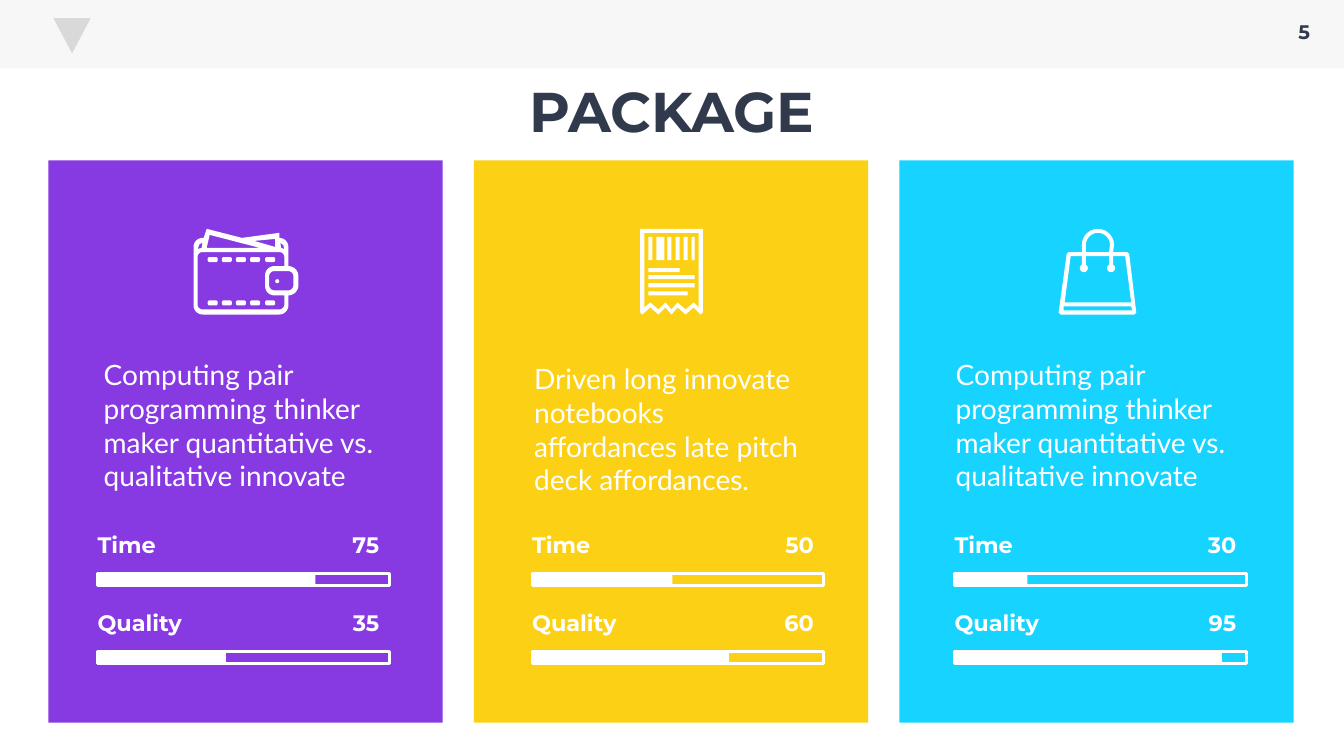
"""Build the PACKAGE slide: three coloured panels with an icon, a text and two meters."""
from dataclasses import dataclass
from math import cos, radians, sin

from pptx import Presentation
from pptx.dml.color import RGBColor
from pptx.enum.shapes import MSO_SHAPE as Preset
from pptx.enum.text import MSO_ANCHOR as Anchor, MSO_AUTO_SIZE as AutoSize, PP_ALIGN as Align
from pptx.shapes.autoshape import Shape
from pptx.slide import Slide
from pptx.util import Inches, Pt

Contour = list[tuple[float, float]]


@dataclass(frozen=True)
class Theme:
    heading_font: str = "Montserrat"
    body_font: str = "Lato"
    dark: str = "31394C"
    white: str = "FFFFFF"
    header: str = "F7F7F7"
    emblem: str = "D9D9D9"
    purple: str = "873AE2"
    yellow: str = "FCD015"
    cyan: str = "17D3FF"
    title_size: int = 40
    body_size: int = 20
    label_size: int = 16
    number_size: int = 14
    frame_width: int = 2


@dataclass(frozen=True)
class Box:
    left: float
    top: float
    width: float
    height: float

    def inches(self) -> list[Inches]:
        return [Inches(length) for length in (self.left, self.top, self.width, self.height)]


@dataclass(frozen=True)
class TextStyle:
    font: str
    size: int
    color: str
    bold: bool = True
    align: Align = Align.LEFT
    anchor: Anchor = Anchor.MIDDLE
    grow: bool = False


@dataclass(frozen=True)
class Meter:
    label: str
    value: str
    filled: float


@dataclass(frozen=True)
class Package:
    color: str
    icon: list[Contour]
    text: str
    text_box: Box
    text_grows: bool
    meter_left: float
    meters: tuple[Meter, Meter]


THEME = Theme()
PANEL_LEFT, PANEL_STEP = 0.48, 4.22
METER_TOP, METER_STEP, METER_WIDTH, METER_HEIGHT = 5.69, 0.77, 2.89, 0.12


def arc(x: float, y: float, radius: float, start: float, end: float) -> Contour:
    steps = 12
    angles = [radians(start + (end - start) * step / steps) for step in range(steps + 1)]
    return [(x + radius * cos(angle), y + radius * sin(angle)) for angle in angles]


def rectangle(left: float, top: float, right: float, bottom: float) -> Contour:
    return [(left, top), (right, top), (right, bottom), (left, bottom)]


def rounded(left: float, top: float, right: float, bottom: float, radius: float) -> Contour:
    corners = rectangle(left + radius, top + radius, right - radius, bottom - radius)
    return [point for index, (x, y) in enumerate(corners)
            for point in arc(x, y, radius, 180 + 90 * index, 270 + 90 * index)]


def wallet_icon() -> list[Contour]:
    outline = [(2.02, 2.36), (2.05, 2.27), (2.4, 2.36), (2.77, 2.31),
               *arc(2.77, 2.45, 0.09, 270, 360), *arc(2.86, 2.74, 0.1, 270, 360),
               *arc(2.86, 2.83, 0.1, 0, 90), *arc(2.77, 3.03, 0.09, 0, 90),
               *arc(2.01, 3.03, 0.09, 90, 180), *arc(2.01, 2.45, 0.09, 180, 270)]
    inside = [*arc(2.01, 2.55, 0.05, 180, 270), *arc(2.77, 2.55, 0.05, 270, 360),
              (2.82, 2.64), *arc(2.72, 2.73, 0.09, 270, 180),
              *arc(2.72, 2.84, 0.09, 180, 90), (2.82, 2.93),
              *arc(2.77, 3.02, 0.05, 0, 90), *arc(2.01, 3.02, 0.05, 90, 180)]
    gaps = [[(2.82, 2.47), (2.79, 2.46), (2.78, 2.41), (2.81, 2.43)],
            [(2.73, 2.37), (2.73, 2.45), (2.52, 2.39)],
            [(2.08, 2.33), (2.58, 2.46), (2.05, 2.46)],
            [(1.96, 2.47), (1.98, 2.42), (2.01, 2.41), (2, 2.46)]]
    stitches = [rounded(left, top, left + 0.1, top + 0.05, 0.02)
                for top in (2.55, 2.98) for left in (2.06, 2.2, 2.34, 2.48, 2.63)]
    clasp = rounded(2.67, 2.69, 2.91, 2.88, 0.05)
    return [outline, inside, *gaps, clasp, arc(2.75, 2.79, 0.02, 0, 360), *stitches]


def receipt_icon() -> list[Contour]:
    teeth = (6.88, 6.8, 6.72, 6.66, 6.6, 6.53, 6.45)
    outer_edge = [(x, 3.12 if index % 2 else 3.05) for index, x in enumerate(teeth)]
    inner_edge = [(x, y - 0.05) for x, y in outer_edge]
    outline = [(6.35, 2.27), (6.97, 2.27), (6.97, 3.1), (6.95, 3.12),
               *outer_edge, (6.37, 3.12), (6.35, 3.1)]
    inside = [(6.39, 2.31), (6.93, 2.31), (6.93, 3.05), *inner_edge, (6.39, 3.05)]
    bars = [rectangle(left, 2.35, right, 2.58) for left, right in (
        (6.43, 6.47), (6.51, 6.59), (6.62, 6.66), (6.7, 6.74), (6.78, 6.82), (6.86, 6.89))]
    lines = [rectangle(6.43, top, right, top + 0.04) for top, right in (
        (2.66, 6.74), (2.73, 6.89), (2.81, 6.89), (2.89, 6.82))]
    return [outline, inside, *bars, *lines]


def bag_icon() -> list[Contour]:
    outline = [(10.5, 3.1), (10.58, 2.52), (10.6, 2.5), (10.73, 2.5),
               *arc(10.89, 2.43, 0.16, 180, 360), (11.04, 2.5), (11.18, 2.5),
               (11.2, 2.52), (11.27, 3.1), (11.25, 3.12), (10.52, 3.12)]
    handle = [(10.77, 2.5), *arc(10.89, 2.43, 0.12, 180, 360), (11, 2.5)]
    inside = [(10.62, 2.54)]
    for x in (10.75, 11.02):
        inside += [(x - 0.02, 2.54), *arc(x, 2.66, 0.04, 240, -60), (x + 0.02, 2.54)]
    inside += [(11.16, 2.54), (11.22, 3), (10.56, 3)]
    base = [(10.55, 3.04), (11.22, 3.04), (11.23, 3.08), (10.55, 3.08)]
    return [outline, handle, inside, base]


def paint(shape: Shape, color: str) -> None:
    shape.shadow.inherit = False
    shape.fill.solid()
    shape.fill.fore_color.rgb = RGBColor.from_string(color)
    shape.line.fill.background()


def add_block(slide: Slide, box: Box, color: str, preset: Preset = Preset.RECTANGLE) -> None:
    paint(slide.shapes.add_shape(preset, *box.inches()), color)


def add_frame(slide: Slide, box: Box) -> None:
    shape = slide.shapes.add_shape(Preset.RECTANGLE, *box.inches())
    shape.shadow.inherit = False
    shape.fill.background()
    shape.line.color.rgb = RGBColor.from_string(THEME.white)
    shape.line.width = Pt(THEME.frame_width)


def add_icon(slide: Slide, contours: list[Contour]) -> None:
    scaled = [[(Inches(x), Inches(y)) for x, y in contour] for contour in contours]
    builder = slide.shapes.build_freeform(*scaled[0][0])
    for contour in scaled:
        builder.move_to(*contour[0])
        builder.add_line_segments(contour[1:], close=True)
    paint(builder.convert_to_shape(), THEME.white)


def add_text(slide: Slide, box: Box, text: str, style: TextStyle) -> None:
    frame = slide.shapes.add_textbox(*box.inches()).text_frame
    frame.word_wrap = True
    frame.vertical_anchor = style.anchor
    frame.auto_size = AutoSize.SHAPE_TO_FIT_TEXT if style.grow else AutoSize.NONE
    paragraph = frame.paragraphs[0]
    paragraph.alignment = style.align
    run = paragraph.add_run()
    run.text = text
    run.font.name, run.font.size, run.font.bold = style.font, Pt(style.size), style.bold
    run.font.color.rgb = RGBColor.from_string(style.color)


def add_meter(slide: Slide, left: float, top: float, meter: Meter) -> None:
    add_block(slide, Box(left, top, meter.filled, METER_HEIGHT), THEME.white)
    add_frame(slide, Box(left, top, METER_WIDTH, METER_HEIGHT))
    for offset, width, text, align in ((-0.1, 2.26, meter.label, Align.LEFT),
                                       (2.16, 0.73, meter.value, Align.RIGHT)):
        style = TextStyle(THEME.heading_font, THEME.label_size, THEME.white, align=align)
        add_text(slide, Box(left + offset, top - 0.38, width, 0.19), text, style)


def add_package(slide: Slide, index: int, package: Package) -> None:
    add_block(slide, Box(PANEL_LEFT + index * PANEL_STEP, 1.59, 3.91, 5.58), package.color)
    add_icon(slide, package.icon)
    style = TextStyle(THEME.body_font, THEME.body_size, THEME.white, bold=False,
                      anchor=Anchor.TOP, grow=package.text_grows)
    add_text(slide, package.text_box, package.text, style)
    for row, meter in enumerate(package.meters):
        add_meter(slide, package.meter_left, METER_TOP + row * METER_STEP, meter)


def main() -> None:
    computing = "Computing pair programming thinker maker quantitative vs. qualitative innovate"
    driven = "Driven long innovate notebooks affordances late pitch deck affordances."
    packages = (
        Package(THEME.purple, wallet_icon(), computing, Box(0.93, 3.5, 3.02, 1.45), True, 0.97,
                (Meter("Time", "75", 2.16), Meter("Quality", "35", 1.27))),
        Package(THEME.yellow, receipt_icon(), driven, Box(5.2, 3.54, 2.93, 0.44), False, 5.28,
                (Meter("Time", "50", 1.39), Meter("Quality", "60", 1.95))),
        Package(THEME.cyan, bag_icon(), computing, Box(9.38, 3.5, 3.02, 1.45), True, 9.47,
                (Meter("Time", "30", 0.72), Meter("Quality", "95", 2.65))),
    )
    presentation = Presentation()
    presentation.slide_width, presentation.slide_height = Inches(13.33), Inches(7.5)
    slide = presentation.slides.add_slide(presentation.slide_layouts[6])
    add_block(slide, Box(0, 0, 13.33, 0.68), THEME.header)
    add_block(slide, Box(0.53, 0.18, 0.37, 0.35), THEME.emblem, Preset.FLOWCHART_MERGE)
    add_text(slide, Box(12.7, 0.15, 0.47, 0.29), "5", TextStyle(
        THEME.heading_font, THEME.number_size, THEME.dark, align=Align.CENTER, anchor=Anchor.TOP))
    add_text(slide, Box(3.86, 0.87, 5.61, 0.44), "PACKAGE", TextStyle(
        THEME.heading_font, THEME.title_size, THEME.dark, align=Align.CENTER))
    for index, package in enumerate(packages):
        add_package(slide, index, package)
    presentation.save("out.pptx")


if __name__ == "__main__":
    main()
